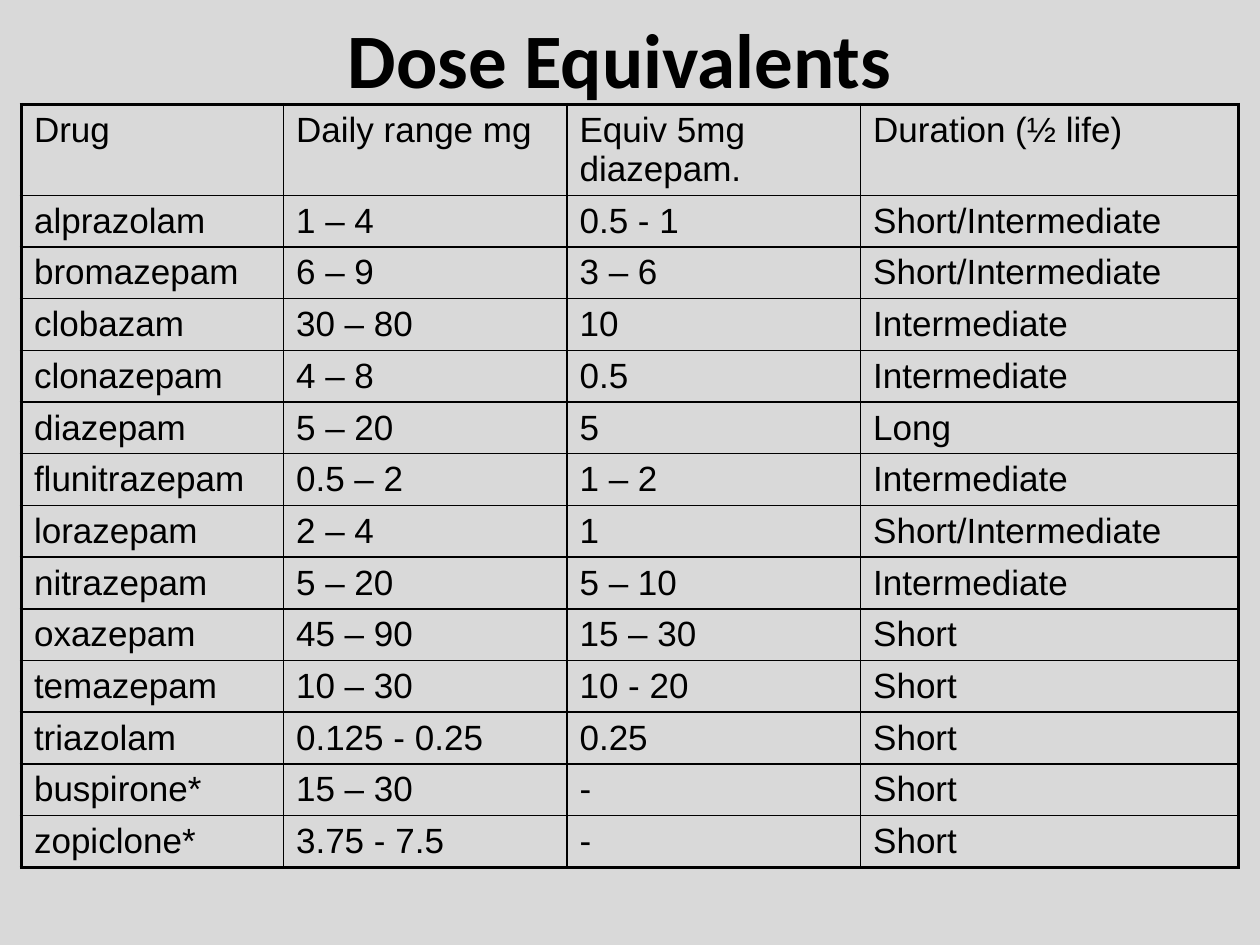
from lxml.etree import SubElement
from pptx import Presentation
from pptx.dml.color import RGBColor
from pptx.enum.text import MSO_ANCHOR, PP_ALIGN
from pptx.oxml.ns import qn
from pptx.util import Inches, Pt

COLORS = {"background": "D9D9D9", "ink": "000000"}
THIN, THICK = 1, 2.25
COLUMN_WIDTHS = [2.08, 2.25, 2.33, 3]
HEADER_HEIGHT, ROW_HEIGHT = 0.72, 0.41
DOSES = [
    ("Drug", "Daily range mg", "Equiv 5mg diazepam.", "Duration (½ life)"),
    ("alprazolam", "1 – 4", "0.5 - 1", "Short/Intermediate"),
    ("bromazepam", "6 – 9", "3 – 6", "Short/Intermediate"),
    ("clobazam", "30 – 80", "10", "Intermediate"),
    ("clonazepam", "4 – 8", "0.5", "Intermediate"),
    ("diazepam", "5 – 20", "5", "Long"),
    ("flunitrazepam", "0.5 – 2", "1 – 2", "Intermediate"),
    ("lorazepam", "2 – 4", "1", "Short/Intermediate"),
    ("nitrazepam", "5 – 20", "5 – 10", "Intermediate"),
    ("oxazepam", "45 – 90", "15 – 30", "Short"),
    ("temazepam", "10 – 30", "10 - 20", "Short"),
    ("triazolam", "0.125 - 0.25", "0.25", "Short"),
    ("buspirone*", "15 – 30", "-", "Short"),
    ("zopiclone*", "3.75 - 7.5", "-", "Short"),
]


def write_text(frame, text, font="Arial", size=20, bold=False,
               align=PP_ALIGN.LEFT, color="ink"):
    para = frame.paragraphs[0]
    para.alignment = align
    span = para.add_run()
    span.text = text
    span.font.name = font
    span.font.size = Pt(size)
    span.font.bold = bold
    span.font.color.rgb = RGBColor.from_string(COLORS[color])


def set_borders(cell, **widths):
    """Draw cell borders; keys are L, R, T, B in that order, widths in points."""
    properties = cell._tc.get_or_add_tcPr()
    for side, width in widths.items():
        line = SubElement(properties, qn(f"a:ln{side}"), w=str(Pt(width)))
        fill = SubElement(line, qn("a:solidFill"))
        SubElement(fill, qn("a:srgbClr"), val=COLORS["ink"])


def add_title(page, text):
    title = page.shapes.title
    title.left, title.top = Inches(0.67), Inches(0.17)
    title.width, title.height = Inches(8.5), Inches(0.58)
    title.text_frame.vertical_anchor = MSO_ANCHOR.MIDDLE
    write_text(title.text_frame, text, font="Calibri", size=44, bold=True,
               align=PP_ALIGN.CENTER)


def add_dose_table(page, rows):
    heights = [HEADER_HEIGHT] + [ROW_HEIGHT] * (len(rows) - 1)
    table = page.shapes.add_table(
        len(rows), len(COLUMN_WIDTHS), Inches(0.17), Inches(0.83),
        Inches(sum(COLUMN_WIDTHS)), Inches(sum(heights))).table
    table.first_row = table.horz_banding = False
    for column, width in zip(table.columns, COLUMN_WIDTHS):
        column.width = Inches(width)

    last_row, last_column = len(rows) - 1, len(COLUMN_WIDTHS) - 1
    for r, values in enumerate(rows):
        table.rows[r].height = Inches(heights[r])
        for c, value in enumerate(values):
            cell = table.cell(r, c)
            write_text(cell.text_frame, value)
            set_borders(cell,
                        L=THICK if c == 0 else THIN,
                        R=THICK if c == last_column else THIN,
                        T=THICK if r == 0 else THIN,
                        B=THICK if r == last_row else THIN)
            cell.fill.background()


def main():
    deck = Presentation()
    deck.slide_width, deck.slide_height = Inches(10), Inches(7.5)
    page = deck.slides.add_slide(deck.slide_layouts[5])
    page.background.fill.solid()
    page.background.fill.fore_color.rgb = RGBColor.from_string(COLORS["background"])
    add_title(page, "Dose Equivalents")
    add_dose_table(page, DOSES)
    deck.save("out.pptx")


if __name__ == "__main__":
    main()
